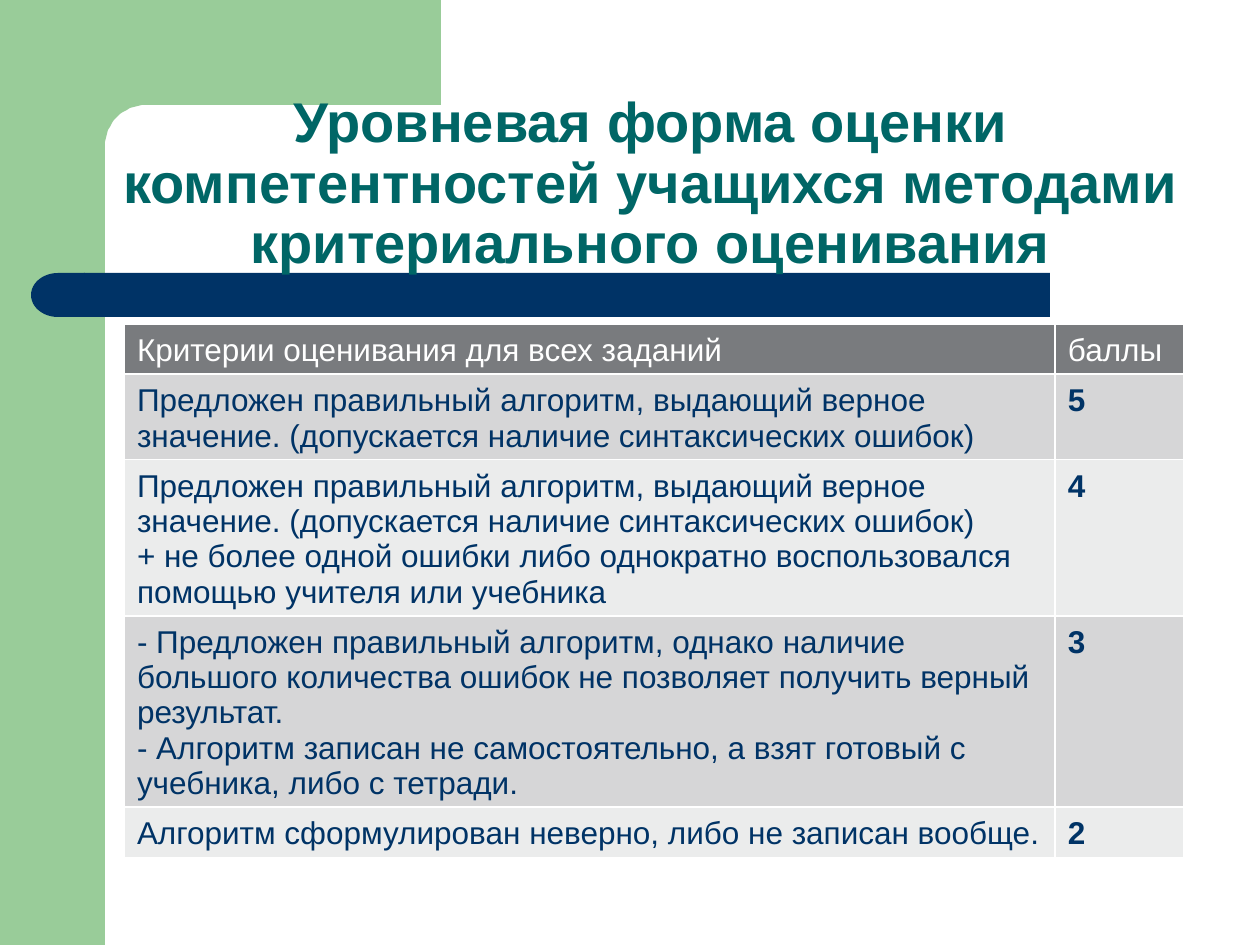
from dataclasses import dataclass
from math import cos, pi, sin

from lxml.etree import SubElement
from pptx import Presentation
from pptx.dml.color import RGBColor
from pptx.enum.shapes import MSO_SHAPE
from pptx.enum.text import MSO_ANCHOR, MSO_AUTO_SIZE, PP_ALIGN
from pptx.oxml.ns import qn
from pptx.util import Pt

EMU_PER_PX = 914400 / 126


@dataclass(frozen=True)
class Theme:
    """Colours, font and type sizes of the slide."""
    font: str = "Arial"
    title_size: int = 32
    table_size: int = 18
    border_width: float = 0.96
    green: str = "99CC99"
    navy: str = "003366"
    teal: str = "006666"
    white: str = "FFFFFF"
    header: str = "797B7E"
    bands: tuple = ("D6D6D7", "EBECEC")


THEME = Theme()
ALGORITHM = ("Предложен правильный алгоритм, выдающий верное значение. "
             "(допускается наличие синтаксических ошибок)")
CRITERIA = [
    ("Критерии оценивания для всех заданий", "баллы"),
    (ALGORITHM, "5"),
    (ALGORITHM + "\n+ не более одной ошибки либо однократно воспользовался "
     "помощью учителя или учебника", "4"),
    ("- Предложен правильный алгоритм, однако наличие большого количества "
     "ошибок не позволяет получить верный результат.\n"
     "- Алгоритм записан не самостоятельно, а взят готовый с учебника, "
     "либо с тетради.", "3"),
    ("Алгоритм сформулирован неверно, либо не записан вообще.", "2"),
]


def px(length):
    """Turn pixels into EMU."""
    return round(length * EMU_PER_PX)


def paint(shape, color):
    """Give a shape a plain fill without line or shadow."""
    shape.shadow.inherit = False
    shape.fill.solid()
    shape.fill.fore_color.rgb = RGBColor.from_string(color)
    shape.line.fill.background()


def style_font(paragraph, size, color, bold):
    """Set the font of a whole paragraph."""
    paragraph.font.name = THEME.font
    paragraph.font.size = Pt(size)
    paragraph.font.bold = bold
    paragraph.font.color.rgb = RGBColor.from_string(color)


def add_green_corner(slide, left, top, width, height):
    """Draw the side panel and the top band with its rounded inner corner."""
    panel_width, band_width, band_height, radius = 105, 441, 105, 41
    panel = slide.shapes.add_shape(
        MSO_SHAPE.RECTANGLE, px(left), px(top), px(panel_width), px(height))
    center_x, center_y = left + panel_width + radius, top + band_height + radius
    angles = [pi / 2 * step / 16 for step in range(17)]
    curve = [(center_x - radius * sin(angle), center_y - radius * cos(angle))
             for angle in angles]
    band_left = left + 63
    outline = slide.shapes.build_freeform(band_left, top, scale=EMU_PER_PX)
    outline.add_line_segments(
        [(left + band_width, top), (left + band_width, top + band_height), *curve,
         (left + panel_width, center_y + 15), (band_left, center_y + 15)])
    band = outline.convert_to_shape()
    for part in (panel, band):
        paint(part, THEME.green)


def add_navy_bar(slide, left, top, width, height):
    """Draw the bar with a rounded left end."""
    cap_width = 54
    bar_left = left + cap_width - 1
    bar = slide.shapes.add_shape(
        MSO_SHAPE.RECTANGLE, px(bar_left), px(top),
        px(left + width - bar_left), px(height))
    cap = slide.shapes.add_shape(
        MSO_SHAPE.FLOWCHART_DELAY, px(left), px(top), px(cap_width), px(height))
    cap.rotation = 180
    for part in (bar, cap):
        paint(part, THEME.navy)


def place_title(slide, left, top, width, height):
    """Fill the title placeholder and bring it in front of the decoration."""
    title = slide.shapes.title
    title.left, title.top, title.width, title.height = map(
        px, (left, top, width, height))
    frame = title.text_frame
    frame.text = ("Уровневая форма оценки компетентностей учащихся методами "
                  "критериального оценивания")
    frame.word_wrap = True
    frame.auto_size = MSO_AUTO_SIZE.NONE
    frame.vertical_anchor = MSO_ANCHOR.MIDDLE
    heading = frame.paragraphs[0]
    heading.alignment = PP_ALIGN.CENTER
    heading.line_spacing = 0.9
    style_font(heading, THEME.title_size, THEME.teal, True)
    slide.shapes[-1].element.addnext(title.element)


def add_borders(cell):
    """Draw thin white borders around a cell."""
    properties = cell._tc.get_or_add_tcPr()
    for position, side in enumerate(("a:lnL", "a:lnR", "a:lnT", "a:lnB")):
        border = properties.makeelement(
            qn(side), {"w": str(Pt(THEME.border_width))})
        fill = SubElement(border, qn("a:solidFill"))
        SubElement(fill, qn("a:srgbClr"), val=THEME.white)
        properties.insert(position, border)


def add_criteria_table(slide, left, top, width, height):
    """Draw the table of criteria and points."""
    score_width = 129
    row_heights = (50, 85, 156, 191, 50)
    table = slide.shapes.add_table(
        len(CRITERIA), 2, px(left), px(top), px(width), px(height)).table
    for column, column_width in zip(table.columns, (width - score_width, score_width)):
        column.width = px(column_width)
    for index, (row, texts) in enumerate(zip(table.rows, CRITERIA)):
        row.height = px(row_heights[index])
        is_header = index == 0
        background = THEME.header if is_header else THEME.bands[(index - 1) % 2]
        color = THEME.white if is_header else THEME.navy
        for cell, text, is_score in zip(row.cells, texts, (False, True)):
            cell.text = text
            cell.margin_left = cell.margin_right = px(13)
            cell.margin_top, cell.margin_bottom = px(9), px(6)
            cell.fill.solid()
            cell.fill.fore_color.rgb = RGBColor.from_string(background)
            add_borders(cell)
            for paragraph in cell.text_frame.paragraphs:
                style_font(paragraph, THEME.table_size, color,
                           is_score and not is_header)


def main():
    """Build and save the slide."""
    presentation = Presentation()
    presentation.slide_width, presentation.slide_height = px(1260), px(945)
    slide = presentation.slides.add_slide(presentation.slide_layouts[5])
    add_green_corner(slide, 0, 0, 441, 945)
    add_navy_bar(slide, 31, 273, 1019, 44)
    place_title(slide, 74, 106, 1153, 158)
    add_criteria_table(slide, 124, 324, 1060, 532)
    presentation.save("out.pptx")


if __name__ == "__main__":
    main()
